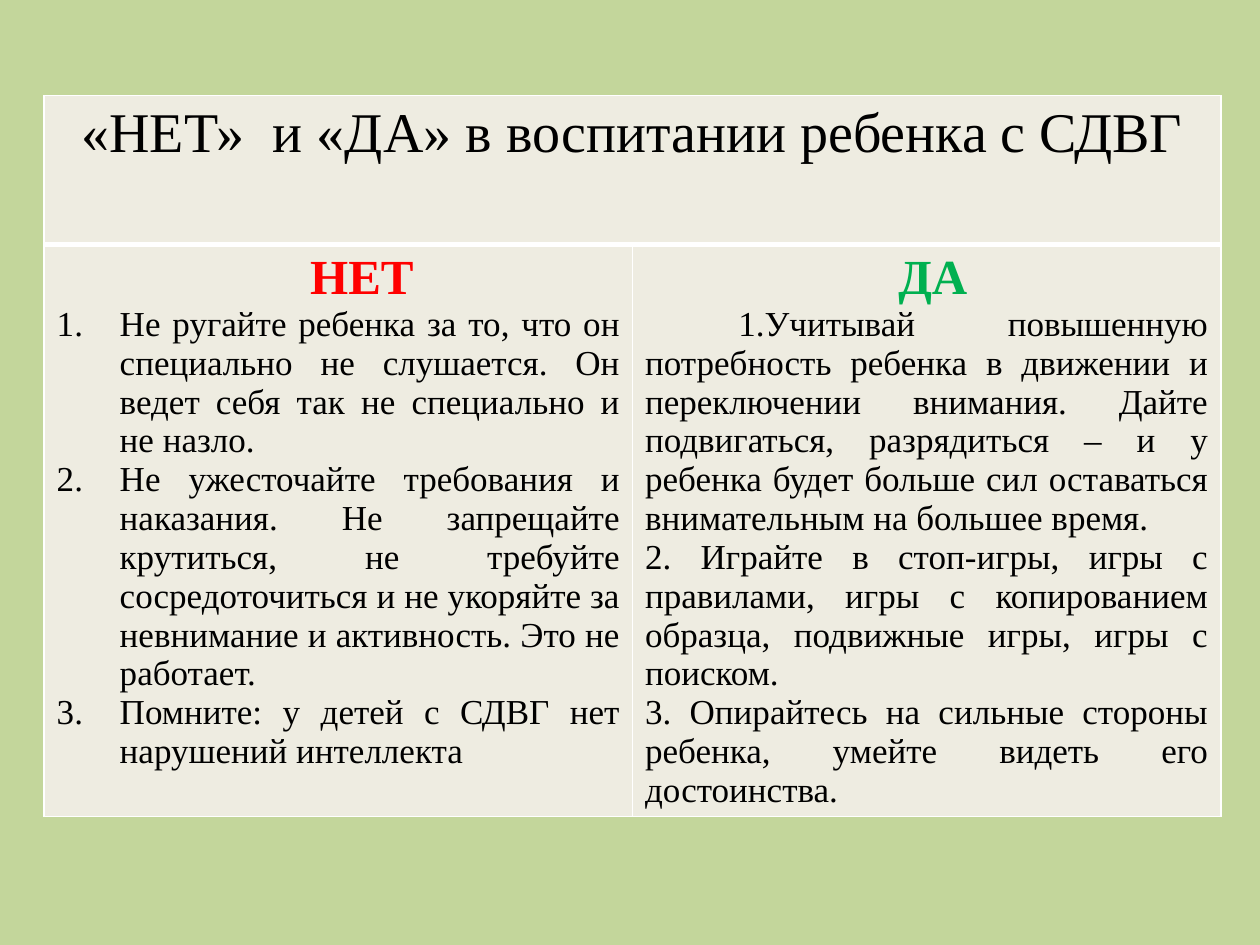
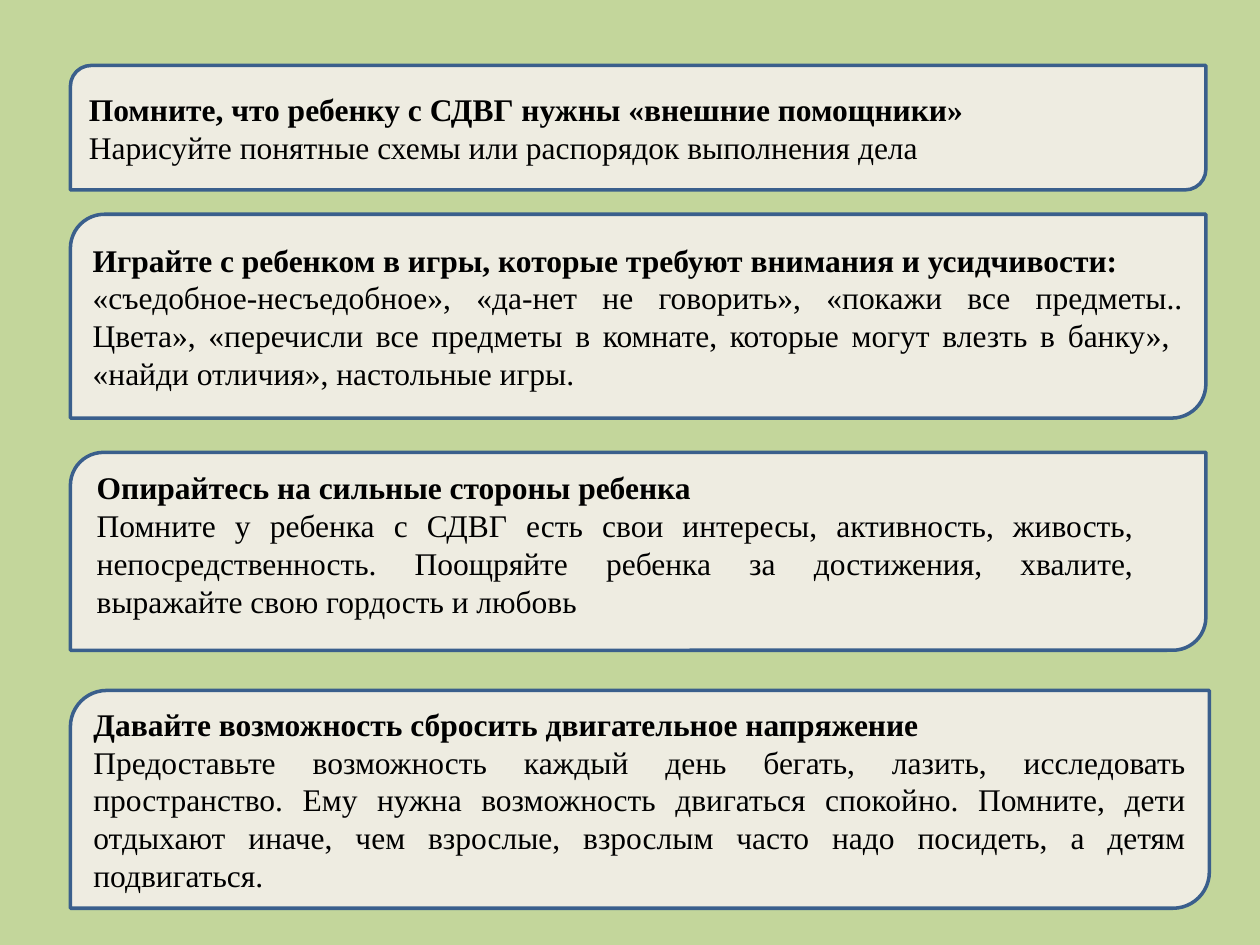
"""Two slides of advice for parents of a child with ADHD: a table and four cards."""
from lxml.etree import SubElement
from pptx import Presentation
from pptx.dml.color import RGBColor
from pptx.enum.shapes import MSO_SHAPE as Shape
from pptx.enum.text import MSO_ANCHOR as Anchor, PP_ALIGN as Align
from pptx.oxml import parse_xml
from pptx.oxml.ns import nsdecls, qn
from pptx.util import Cm, Pt

FONT = "Times New Roman"
GREEN, CREAM, BLUE, WHITE, BLACK = "C3D69B", "EEECE1", "3A5F8C", "FFFFFF", "000000"

TITLE = "«НЕТ»  и «ДА» в воспитании ребенка с СДВГ"
COLUMNS = [
    dict(heading="НЕТ", color="FF0000", shift=0.95, numbered=True, first_indent=0, advice=[
        "Не ругайте ребенка за то, что он специально не слушается. Он ведет себя так не специально и не назло.",
        "Не ужесточайте требования и наказания. Не запрещайте крутиться, не требуйте сосредоточиться "
        "и не укоряйте за невнимание и активность. Это не работает.",
        "Помните: у детей с СДВГ нет нарушений интеллекта"]),
    dict(heading="ДА", color="00B050", shift=0.25, numbered=False, first_indent=1.88, advice=[
        "1.Учитывай повышенную потребность ребенка в движении и переключении внимания. Дайте подвигаться, "
        "разрядиться – и у ребенка будет больше сил оставаться внимательным на большее время.",
        "2. Играйте в стоп-игры, игры с правилами, игры с копированием образца, подвижные игры, игры с поиском.",
        "3. Опирайтесь на сильные стороны ребенка, умейте видеть его достоинства."]),
]
TABLE_LEFT, TABLE_TOP, COLUMN_WIDTH = 0.89, 1.93, 11.86
ROW_HEIGHTS = [3, 11.52]

CARD_LEFT = 1.42
CARDS = [
    dict(top=1.32, width=22.89, height=2.51, align=Align.LEFT,
         heading="Помните, что ребенку с СДВГ нужны «внешние помощники»",
         body="Нарисуйте понятные схемы или распорядок выполнения дела"),
    dict(top=4.32, width=22.89, height=4.11, align=Align.JUSTIFY,
         heading="Играйте с ребенком в игры, которые требуют внимания и усидчивости:",
         body="«съедобное-несъедобное», «да-нет не говорить», «покажи все предметы.. Цвета», «перечисли все "
              "предметы в комнате, которые могут влезть в банку»,  «найди отличия», настольные игры."),
    dict(top=9.12, width=22.89, height=3.99, align=Align.JUSTIFY, text_area=(1.7, 9.32, 21.41, 3.33),
         heading="Опирайтесь на сильные стороны ребенка",
         body="Помните у ребенка с СДВГ есть свои интересы, активность, живость, непосредственность. "
              "Поощряйте ребенка за достижения, хвалите, выражайте свою гордость и любовь"),
    dict(top=13.92, width=22.96, height=4.39, align=Align.JUSTIFY,
         heading="Давайте возможность сбросить двигательное напряжение",
         body="Предоставьте возможность каждый день бегать, лазить, исследовать пространство. Ему нужна "
              "возможность двигаться спокойно. Помните, дети отдыхают иначе, чем взрослые, взрослым часто "
              "надо посидеть, а детям подвигаться."),
]


def paint(fill, color):
    fill.solid()
    fill.fore_color.rgb = RGBColor.from_string(color)


def write(frame, text, size=18, color=BLACK, bold=False, align=Align.LEFT,
          margin=0, indent=0, numbered=False):
    paragraph = frame.paragraphs[0]
    if paragraph.runs:
        paragraph = frame.add_paragraph()
    paragraph.alignment = align
    properties = paragraph._p.get_or_add_pPr()
    properties.set("marL", str(Cm(margin)))
    properties.set("indent", str(Cm(indent)))
    if numbered:
        SubElement(properties, qn("a:buFont"), typeface="+mj-lt")
        SubElement(properties, qn("a:buAutoNum"), type="arabicPeriod")
    run = paragraph.add_run()
    run.text = text
    run.font.name, run.font.size, run.font.bold = FONT, Pt(size), bold
    run.font.color.rgb = RGBColor.from_string(color)


def style_cell(cell, top, bottom):
    paint(cell.fill, CREAM)
    borders = [("lnL", 1), ("lnR", 1), ("lnT", top), ("lnB", bottom)]
    for place, (side, width) in enumerate(borders):
        cell._tc.get_or_add_tcPr().insert(place, parse_xml(
            f'<a:{side} {nsdecls("a")} w="{Pt(width)}"><a:solidFill>'
            f'<a:srgbClr val="{WHITE}"/></a:solidFill></a:{side}>'))


def add_slide(deck):
    slide = deck.slides.add_slide(deck.slide_layouts[6])
    paint(slide.background.fill, GREEN)
    return slide


def add_advice_table(slide):
    table = slide.shapes.add_table(
        len(ROW_HEIGHTS), len(COLUMNS), Cm(TABLE_LEFT), Cm(TABLE_TOP),
        Cm(COLUMN_WIDTH * len(COLUMNS)), Cm(sum(ROW_HEIGHTS))).table
    for row, height in zip(table.rows, ROW_HEIGHTS):
        row.height = Cm(height)
    for number, column in enumerate(COLUMNS):
        table.columns[number].width = Cm(COLUMN_WIDTH)
        style_cell(table.cell(0, number), top=1, bottom=3)
        cell = table.cell(1, number)
        style_cell(cell, top=3, bottom=1)
        write(cell.text_frame, column["heading"], size=28, color=column["color"], bold=True,
              align=Align.CENTER, margin=column["shift"])
        for place, advice in enumerate(column["advice"]):
            if column["numbered"]:
                layout = dict(margin=1.27, indent=-1.27, numbered=True)
            else:
                layout = dict(indent=0 if place else column["first_indent"])
            write(cell.text_frame, advice, size=20, align=Align.JUSTIFY, **layout)
    title = table.cell(0, 0)
    title.merge(table.cell(0, len(COLUMNS) - 1))
    write(title.text_frame, TITLE, size=32, align=Align.CENTER)


def add_card(slide, card):
    outline = slide.shapes.add_shape(
        Shape.ROUND_2_DIAG_RECTANGLE, Cm(CARD_LEFT), Cm(card["top"]), Cm(card["width"]), Cm(card["height"]))
    outline.shadow.inherit = False
    paint(outline.fill, CREAM)
    paint(outline.line.fill, BLUE)
    outline.line.width = Pt(2)
    return outline


def add_cards(slide):
    holders = [(add_card(slide, card), card) for card in CARDS]
    for holder, card in holders:
        if "text_area" in card:
            holder = slide.shapes.add_textbox(*map(Cm, card["text_area"]))
        else:
            holder.text_frame.vertical_anchor = Anchor.MIDDLE
        holder.text_frame.word_wrap = True
        write(holder.text_frame, card["heading"], bold=True, align=card["align"])
        write(holder.text_frame, card["body"], align=card["align"])


def main():
    deck = Presentation()
    deck.slide_width, deck.slide_height = Cm(25.4), Cm(19.05)
    add_advice_table(add_slide(deck))
    add_cards(add_slide(deck))
    deck.save("out.pptx")


if __name__ == "__main__":
    main()
